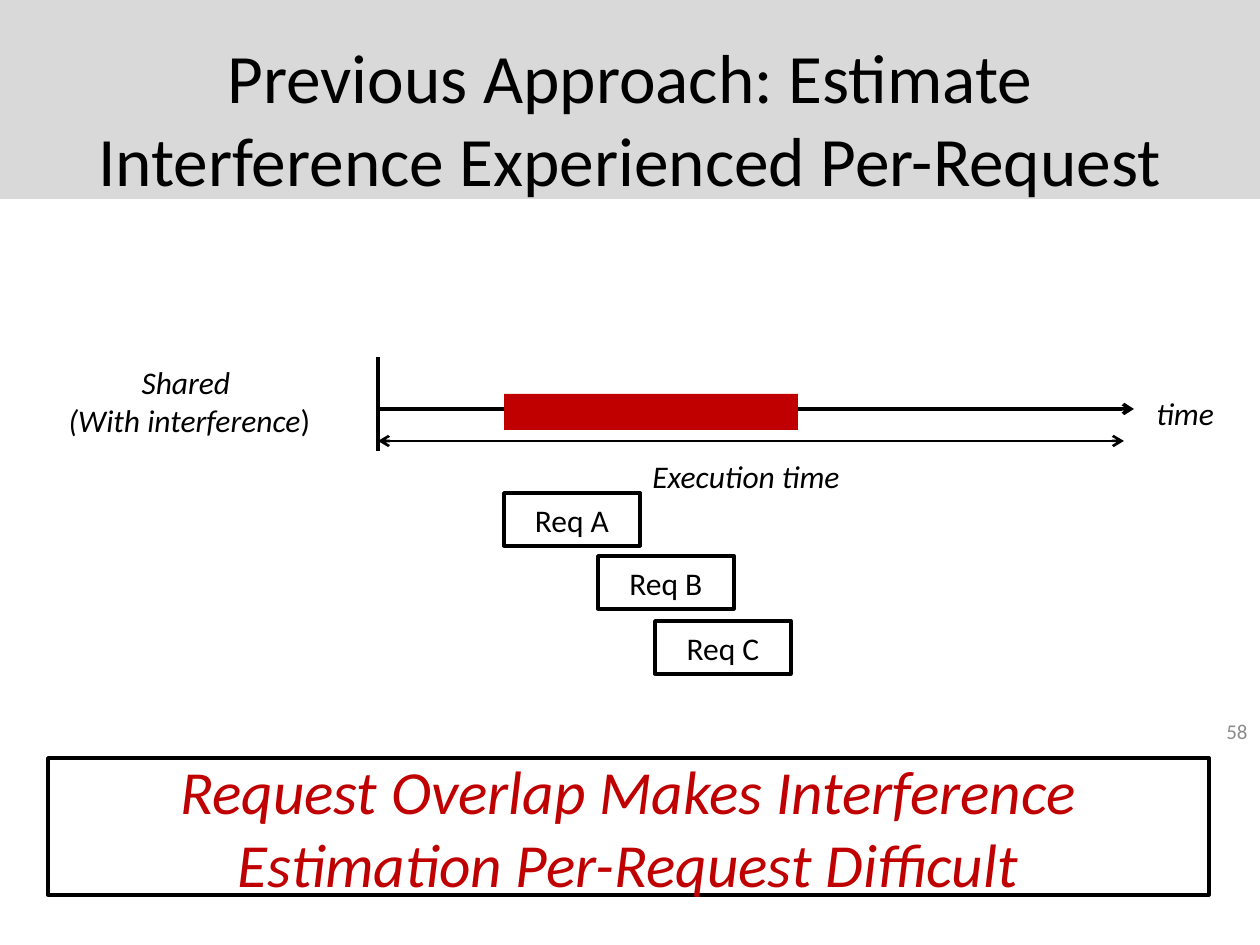
from lxml.etree import SubElement
from pptx import Presentation
from pptx.dml.color import RGBColor
from pptx.enum.shapes import MSO_CONNECTOR, MSO_SHAPE
from pptx.enum.text import MSO_ANCHOR, PP_ALIGN
from pptx.oxml.ns import qn
from pptx.util import Emu, Pt

EMU_PER_PX = 914400 // 126
COLORS = {
    "ink": "000000",
    "paper": "FFFFFF",
    "banner": "D9D9D9",
    "accent": "C00000",
    "muted": "8C8C8C",
}


class SlideBuilder:
    font = "Calibri"
    body_size = 18
    line_width = 2

    def __init__(self, page):
        self.page = page

    def px(self, *lengths):
        return [Emu(length * EMU_PER_PX) for length in lengths]

    def color(self, name):
        return RGBColor.from_string(COLORS[name])

    def fill_frame(self, frame, lines, size, color, italic, align, anchor):
        frame.word_wrap = True
        frame.vertical_anchor = anchor
        for index, line in enumerate(lines):
            para = frame.paragraphs[0] if index == 0 else frame.add_paragraph()
            para.alignment = align
            para.font.name = self.font
            para.font.size = Pt(size)
            para.font.italic = italic
            para.font.color.rgb = self.color(color)
            para.add_run().text = line

    def text(self, bounds, *lines, size=body_size, color="ink", italic=False,
             align=PP_ALIGN.LEFT, anchor=MSO_ANCHOR.TOP):
        box = self.page.shapes.add_textbox(*self.px(*bounds))
        self.fill_frame(box.text_frame, lines, size, color, italic, align, anchor)
        return box

    def box(self, bounds, *lines, fill=None, outlined=False,
            size=body_size, color="ink", italic=False):
        box = self.page.shapes.add_shape(MSO_SHAPE.RECTANGLE, *self.px(*bounds))
        box.shadow.inherit = False
        if fill:
            box.fill.solid()
            box.fill.fore_color.rgb = self.color(fill)
        else:
            box.fill.background()
        if outlined:
            box.line.color.rgb = self.color("ink")
            box.line.width = Pt(self.line_width)
        else:
            box.line.fill.background()
        self.fill_frame(box.text_frame, lines, size, color, italic,
                        PP_ALIGN.CENTER, MSO_ANCHOR.MIDDLE)
        return box

    def line(self, start, end, width=line_width, arrows=()):
        line = self.page.shapes.add_connector(
            MSO_CONNECTOR.STRAIGHT, *self.px(*start, *end))
        line.line.color.rgb = self.color("ink")
        line.line.width = Pt(width)
        properties = line._element.spPr
        outline = properties.find(qn("a:ln"))
        for arrow in arrows:
            SubElement(outline, qn(f"a:{arrow}"), type="arrow")
        SubElement(properties, qn("a:effectLst"))
        return line


def main():
    deck = Presentation()
    deck.slide_width, deck.slide_height = Emu(1260 * EMU_PER_PX), Emu(945 * EMU_PER_PX)
    slide = SlideBuilder(deck.slides.add_slide(deck.slide_layouts[6]))

    slide.box((0, 0, 1260, 199), fill="banner")
    slide.text((63, 38, 1134, 158),
               "Previous Approach: Estimate Interference Experienced Per-Request",
               size=39.6, align=PP_ALIGN.CENTER, anchor=MSO_ANCHOR.MIDDLE)
    slide.text((966, 706, 294, 50), "58", size=12, color="muted",
               align=PP_ALIGN.RIGHT, anchor=MSO_ANCHOR.MIDDLE)

    shared = slide.text((53, 357, 273, 89), "Shared ", "(With interference",
                        italic=True, align=PP_ALIGN.CENTER)
    span = shared.text_frame.paragraphs[1].add_run()
    span.text = ")"
    span.font.italic = False

    axis_x = 378
    slide.line((axis_x, 357), (axis_x, 451))
    slide.line((axis_x, 409), (1134, 409), arrows=["tailEnd"])
    slide.text((1144, 388, 116, 50), "time", italic=True)
    slide.text((640, 451, 242, 50), "Execution time", italic=True)

    slide.box((504, 394, 294, 36), fill="accent")
    for name, left, top in (("A", 504, 493), ("B", 598, 556), ("C", 655, 621)):
        slide.box((left, top, 136, 53), f"Req {name}", outlined=True)

    slide.box((48, 758, 1161, 137),
              "Request Overlap Makes Interference Estimation Per-Request Difficult",
              fill="paper", outlined=True, size=35, color="accent", italic=True)
    slide.line((axis_x, 441), (1124, 441), width=1.5, arrows=["headEnd", "tailEnd"])

    deck.save("out.pptx")


if __name__ == "__main__":
    main()
